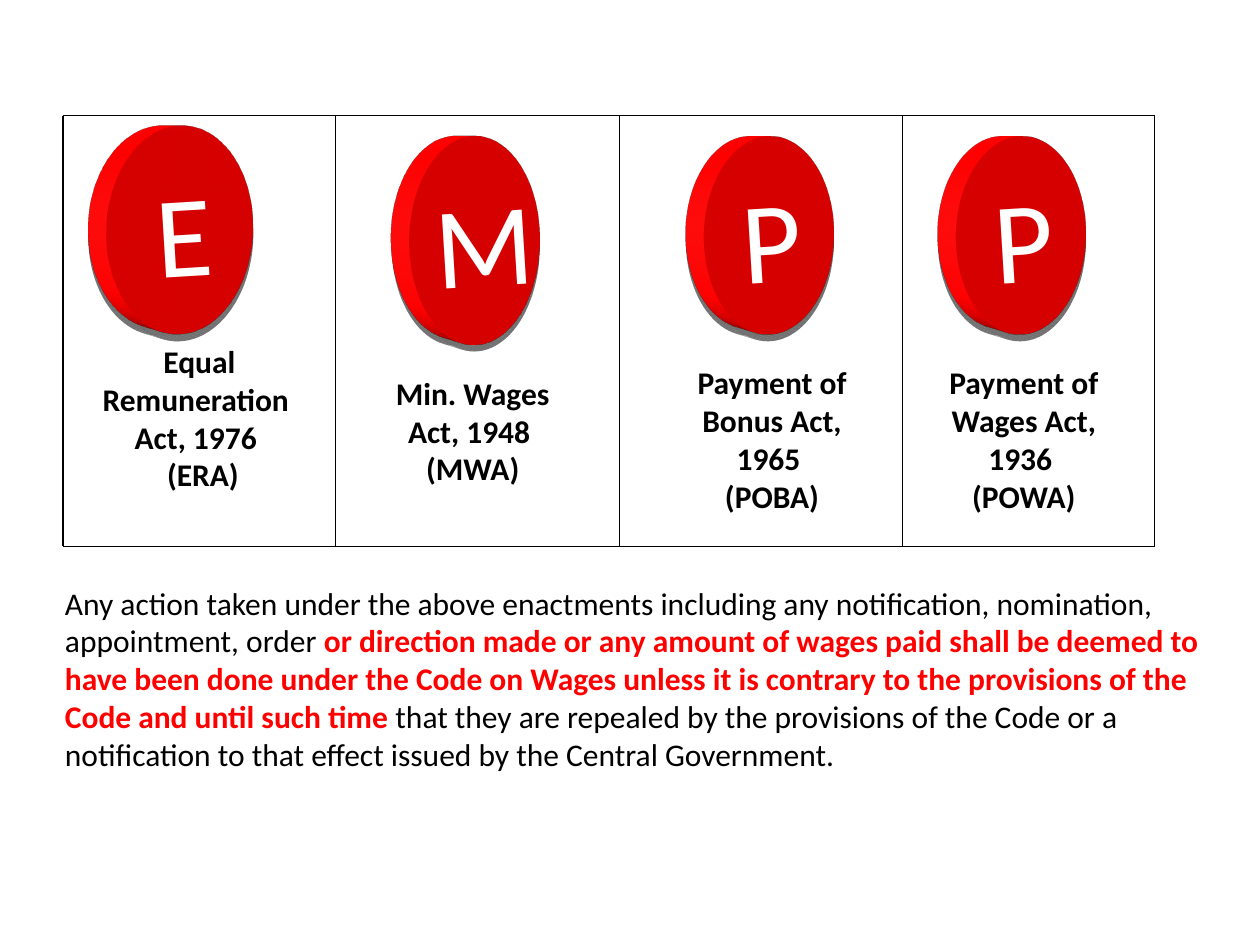
from dataclasses import dataclass

from lxml.etree import SubElement
from pptx import Presentation
from pptx.dml.color import RGBColor
from pptx.enum.shapes import MSO_CONNECTOR, MSO_SHAPE
from pptx.enum.text import MSO_ANCHOR, MSO_AUTO_SIZE, PP_ALIGN
from pptx.oxml import parse_xml
from pptx.oxml.ns import nsdecls, qn
from pptx.util import Cm, Pt


@dataclass(frozen=True)
class Theme:
    font: str = "Calibri"
    black: RGBColor = RGBColor(0, 0, 0)
    red: RGBColor = RGBColor(0xFF, 0, 0)
    white: RGBColor = RGBColor(0xFF, 0xFF, 0xFF)
    letter: Pt = Pt(66)
    body: Pt = Pt(18)
    rule: Pt = Pt(0.75)


THEME = Theme()

COLUMN_EDGES = (1.27, 6.77, 12.49, 18.2, 23.28)
GRID_TOP, GRID_BOTTOM = 2.33, 11.01

# letter, disc box, caption box, caption paragraphs
ACTS = (
    ("E", (1.9, 2.54, 3.6, 4.23), (1.69, 6.77, 4.66, 3.33),
     ("Equal Remuneration ", "Act, 1976 ", " (ERA)")),
    ("M", (8.04, 2.75, 3.18, 4.23), (7.2, 7.41, 4.66, 2.56),
     ("Min. Wages Act, 1948 ", "(MWA)")),
    ("P", (13.97, 2.75, 3.18, 4.02), (13.34, 7.2, 4.45, 3.33),
     ("Payment of Bonus Act, 1965 ", "(POBA)")),
    ("P", (19.05, 2.75, 3.18, 4.02), (18.63, 7.2, 4.02, 3.33),
     ("Payment of Wages Act, 1936 ", "(POWA)")),
)

SAVING_CLAUSE = (
    ("Any action taken under the above enactments including any notification, "
     "nomination, appointment, order ", False),
    ("or direction made or any amount of wages paid shall be deemed to have been "
     "done under the Code on Wages unless it is contrary to the provisions of the "
     "Code and until such time ", True),
    ("that they are repealed by the provisions of the Code or a notification to "
     "that effect issued by the Central Government.", False),
)

DISC_EFFECTS = (
    f"""<a:effectLst {nsdecls('a')}>
      <a:outerShdw blurRad="225425" dist="50800" dir="5220000" algn="ctr">
        <a:srgbClr val="000000"><a:alpha val="33000"/></a:srgbClr>
      </a:outerShdw></a:effectLst>""",
    f"""<a:scene3d {nsdecls('a')}>
      <a:camera prst="perspectiveHeroicExtremeRightFacing" fov="4800000">
        <a:rot lat="486000" lon="19530000" rev="174000"/></a:camera>
      <a:lightRig rig="harsh" dir="t">
        <a:rot lat="0" lon="0" rev="3000000"/></a:lightRig></a:scene3d>""",
    f"""<a:sp3d {nsdecls('a')} extrusionH="254000" contourW="19050">
      <a:bevelT w="82550" h="44450" prst="angle"/>
      <a:bevelB w="82550" h="44450" prst="angle"/>
      <a:contourClr><a:srgbClr val="FFFFFF"/></a:contourClr></a:sp3d>""",
)


def add_run(p, text, size, color, bold=False):
    r = p.add_run()
    r.text = text
    r.font.name = THEME.font
    r.font.size = size
    r.font.bold = bold
    r.font.color.rgb = color


def add_rule(s, x1, y1, x2, y2):
    line = s.shapes.add_connector(
        MSO_CONNECTOR.STRAIGHT, Cm(x1), Cm(y1), Cm(x2), Cm(y2))
    line.line.color.rgb = THEME.black
    line.line.width = THEME.rule
    SubElement(line._element.spPr, qn("a:effectLst"))


def add_grid(s):
    for y in (GRID_TOP, GRID_BOTTOM):
        add_rule(s, COLUMN_EDGES[0], y, COLUMN_EDGES[-1], y)
    for x in COLUMN_EDGES:
        add_rule(s, x, GRID_TOP, x, GRID_BOTTOM)


def add_disc(s, letter, box):
    """Red coin, turned in perspective, carrying one initial."""
    sp = s.shapes.add_shape(MSO_SHAPE.FLOWCHART_CONNECTOR, *map(Cm, box))
    sp.fill.solid()
    sp.fill.fore_color.rgb = THEME.red
    sp.line.fill.background()
    for xml in DISC_EFFECTS:
        sp._element.spPr.append(parse_xml(xml))
    tf = sp.text_frame
    tf.vertical_anchor = MSO_ANCHOR.MIDDLE
    p = tf.paragraphs[0]
    p.alignment = PP_ALIGN.CENTER
    add_run(p, letter, THEME.letter, THEME.white)


def add_text_frame(s, box):
    tf = s.shapes.add_textbox(*map(Cm, box)).text_frame
    tf.word_wrap = True
    tf.auto_size = MSO_AUTO_SIZE.SHAPE_TO_FIT_TEXT
    return tf


def add_caption(s, box, lines):
    tf = add_text_frame(s, box)
    for i, text in enumerate(lines):
        p = tf.add_paragraph() if i else tf.paragraphs[0]
        p.alignment = PP_ALIGN.CENTER
        add_run(p, text, THEME.body, THEME.black, bold=True)


def add_saving_clause(s):
    p = add_text_frame(s, (1.06, 11.64, 23.92, 4.87)).paragraphs[0]
    for text, stressed in SAVING_CLAUSE:
        color = THEME.red if stressed else THEME.black
        add_run(p, text, THEME.body, color, bold=stressed)


def main():
    prs = Presentation()
    prs.slide_width, prs.slide_height = Cm(25.4), Cm(19.05)
    s = prs.slides.add_slide(prs.slide_layouts[6])
    add_grid(s)
    for letter, disc_box, caption_box, lines in ACTS:
        add_disc(s, letter, disc_box)
        add_caption(s, caption_box, lines)
    add_saving_clause(s)
    prs.save("out.pptx")


if __name__ == "__main__":
    main()
